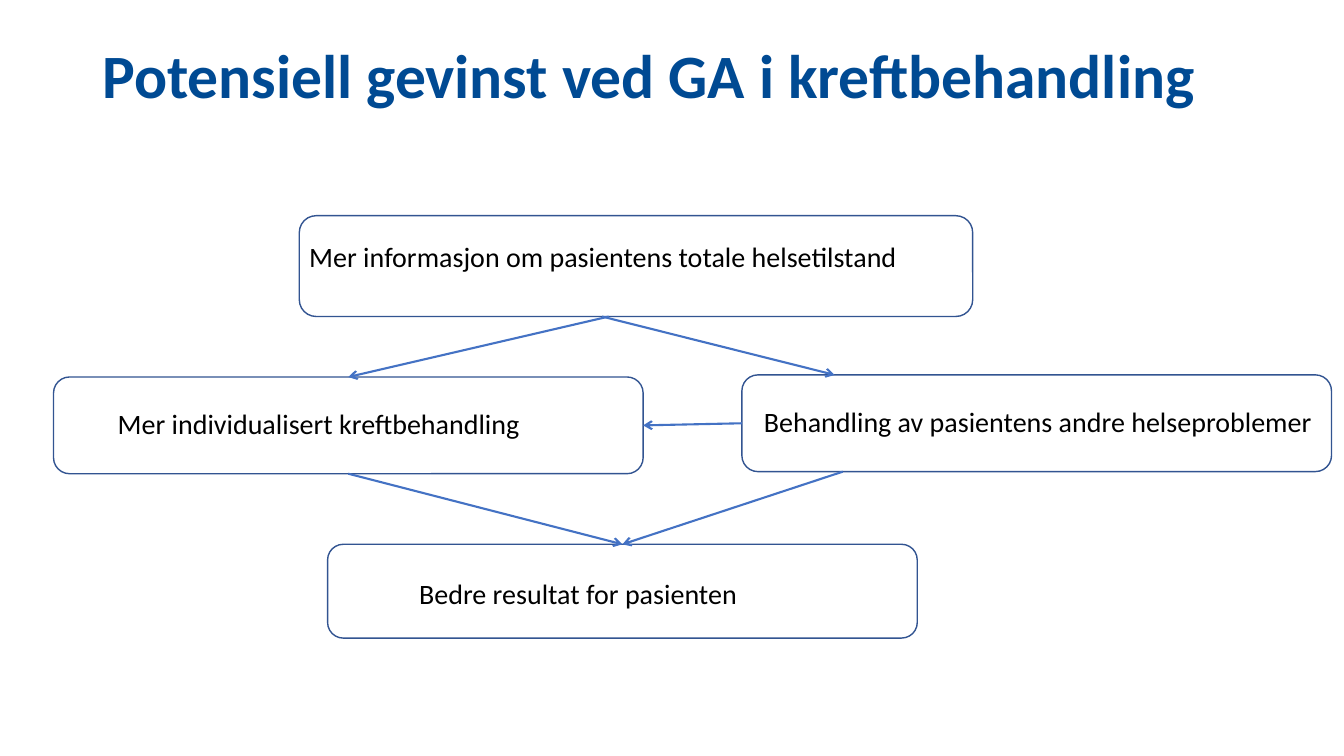
from collections import namedtuple
from dataclasses import dataclass

from lxml import etree
from pptx import Presentation
from pptx.dml.color import RGBColor
from pptx.enum.shapes import MSO_CONNECTOR, MSO_SHAPE
from pptx.enum.text import MSO_ANCHOR, PP_ALIGN
from pptx.oxml.ns import qn
from pptx.util import Pt


@dataclass(frozen=True)
class Theme:
    font: str = "Calibri"
    title_color: RGBColor = RGBColor(0x00, 0x4A, 0x93)
    text_color: RGBColor = RGBColor(0x00, 0x00, 0x00)
    border_color: RGBColor = RGBColor(0x32, 0x54, 0x91)
    arrow_color: RGBColor = RGBColor(0x44, 0x72, 0xC4)
    title_size: float = 44
    label_size: float = 20
    border_width: float = 1
    arrow_width: float = 1.5


THEME = Theme()
TOP, LEFT, BOTTOM, RIGHT = range(4)
BOX_WIDTH = 421.2
LABEL_HEIGHT = 31.7

# An arrow end is a point; a box side is added where the end is joined
End = namedtuple("End", "x y box side", defaults=(None, None))


def add_text(slide, text, left, top, width, height, *, size=THEME.label_size,
             color=THEME.text_color, bold=False, line_spacing=1.0):
    shape = slide.shapes.add_textbox(Pt(left), Pt(top), Pt(width), Pt(height))
    frame = shape.text_frame
    frame.word_wrap = True
    frame.vertical_anchor = MSO_ANCHOR.TOP
    paragraph = frame.paragraphs[0]
    paragraph.alignment = PP_ALIGN.LEFT
    paragraph.line_spacing = line_spacing
    run = paragraph.add_run()
    run.text = text
    run.font.name = THEME.font
    run.font.size = Pt(size)
    run.font.bold = bold
    run.font.color.rgb = color


def add_box(slide, left, top, width, height):
    shape = slide.shapes.add_shape(
        MSO_SHAPE.ROUNDED_RECTANGLE, Pt(left), Pt(top), Pt(width), Pt(height))
    shape.shadow.inherit = False
    shape.fill.background()
    shape.line.color.rgb = THEME.border_color
    shape.line.width = Pt(THEME.border_width)
    return shape


def side_of(box, side):
    """Return the joined end at the middle of one side of a box."""
    x = {LEFT: box.left, RIGHT: box.left + box.width}.get(side, box.left + box.width // 2)
    y = {TOP: box.top, BOTTOM: box.top + box.height}.get(side, box.top + box.height // 2)
    return End(x, y, box, side)


def add_arrow(slide, start, end):
    connector = slide.shapes.add_connector(
        MSO_CONNECTOR.STRAIGHT, start.x, start.y, end.x, end.y)
    if start.box is not None:
        connector.begin_connect(start.box, start.side)
    if end.box is not None:
        connector.end_connect(end.box, end.side)
    connector.line.color.rgb = THEME.arrow_color
    connector.line.width = Pt(THEME.arrow_width)
    etree.SubElement(connector.line._get_or_add_ln(), qn("a:tailEnd"), type="arrow")
    etree.SubElement(connector._element.spPr, qn("a:effectLst"))


def main():
    presentation = Presentation()
    presentation.slide_width, presentation.slide_height = Pt(960), Pt(540)
    slide = presentation.slides.add_slide(presentation.slide_layouts[6])

    # Title
    add_text(slide, "Potensiell gevinst ved GA i kreftbehandling", 66, 28.8, 828, 104.4,
             size=THEME.title_size, color=THEME.title_color, bold=True, line_spacing=0.9)

    # Boxes
    information = add_box(slide, 213.8, 154.1, 481, 72)
    cancer_care = add_box(slide, 38.2, 269.3, BOX_WIDTH, 69.1)
    result = add_box(slide, 234, 388.8, BOX_WIDTH, 67)
    other_care = add_box(slide, 529.9, 267.8, BOX_WIDTH, 69.1)

    # Labels
    labels = [
        ("Mer informasjon om pasientens totale helsetilstand", 213.8, 167.8, 481),
        ("Mer individualisert kreftbehandling", 77, 286.6, 398.9),
        ("Bedre resultat for pasienten", 292.3, 408.2, 303.8),
        ("Behandling av pasientens andre helseproblemer", 538.6, 285.1, 412.6),
    ]
    for text, left, top, width in labels:
        add_text(slide, text, left, top, width, LABEL_HEIGHT)

    # Arrows
    information_bottom = information.top + information.height
    other_care_bottom = other_care.top + other_care.height
    arrows = [
        (End(Pt(434.9), information_bottom), side_of(cancer_care, TOP)),
        (side_of(cancer_care, BOTTOM), side_of(result, TOP)),
        (End(Pt(430), information_bottom), End(Pt(596.2), other_care.top)),
        (End(Pt(602), other_care_bottom), side_of(result, TOP)),
        (side_of(other_care, LEFT), side_of(cancer_care, RIGHT)),
    ]
    for start, end in arrows:
        add_arrow(slide, start, end)

    presentation.save("out.pptx")


if __name__ == "__main__":
    main()
